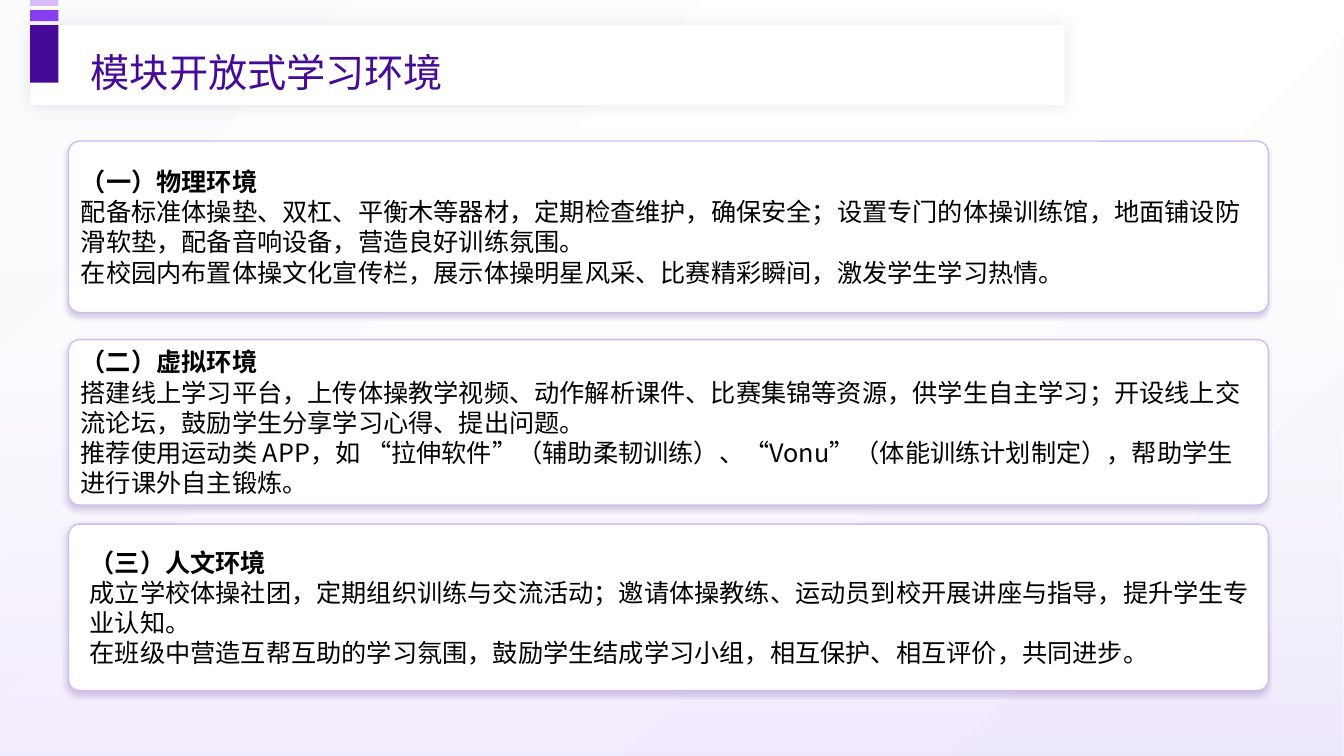
from lxml import etree
from pptx import Presentation
from pptx.dml.color import RGBColor
from pptx.enum.shapes import MSO_SHAPE
from pptx.enum.text import MSO_ANCHOR, MSO_AUTO_SIZE, PP_ALIGN
from pptx.oxml.ns import qn
from pptx.util import Inches, Pt

FONT = "Noto Sans CJK SC"
COLORS = {"deep": "450B98", "violet": "873DF1", "lilac": "D7BEFA", "border": "D0BCF5",
          "glow": "AF7EF6", "shade": "340872", "mist": "FAFBFC", "white": "FFFFFF",
          "black": "000000"}
RGB = {name: RGBColor.from_string(value) for name, value in COLORS.items()}


def set_gradient(parent, stops, angle):
    """Swap the solid fill in parent for a gradient of (position, colour, alpha)."""
    grad = etree.Element(qn("a:gradFill"), rotWithShape="1")
    gs_list = etree.SubElement(grad, qn("a:gsLst"))
    for pos, color, alpha in stops:
        gs = etree.SubElement(gs_list, qn("a:gs"), pos=str(pos * 1000))
        clr = etree.SubElement(gs, qn("a:srgbClr"), val=COLORS[color])
        etree.SubElement(clr, qn("a:alpha"), val=str(alpha * 1000))
    etree.SubElement(grad, qn("a:lin"), ang=str(angle * 60000), scaled="0")
    parent.replace(parent.find(qn("a:solidFill")), grad)


def style_paragraph(p, size, color, bold=False):
    p.alignment = PP_ALIGN.LEFT
    p.font.size = Pt(size)
    p.font.bold = bold
    p.font.color.rgb = RGB[color]
    p.font.name = FONT
    latin = p.font._element.find(qn("a:latin"))
    latin.addnext(etree.Element(qn("a:ea"), typeface=FONT))


prs = Presentation()
prs.slide_width, prs.slide_height = Inches(13.33), Inches(7.5)
s = prs.slides.add_slide(prs.slide_layouts[5])

# Background with a violet glow rising from the bottom
s.background.fill.solid()
set_gradient(s.background._cSld.bg.bgPr,
             [(0, "mist", 100), (50, "white", 100), (97, "mist", 100)], 45)
glow = s.shapes.add_shape(MSO_SHAPE.RECTANGLE, 0, 0, prs.slide_width, prs.slide_height)
glow.shadow.inherit = False
glow.line.fill.background()
glow.fill.solid()
set_gradient(glow._element.spPr, [(35, "lilac", 0), (100, "glow", 15)], 90)
s.shapes._spTree.insert(2, glow._element)

# Title bar
title = s.shapes.title
title.left, title.top = Inches(0.3), Inches(0.25)
title.width, title.height = Inches(10.26), Inches(0.79)
title.fill.solid()
title.fill.fore_color.rgb = RGB["white"]
tf = title.text_frame
tf.text = "模块开放式学习环境"
tf.auto_size = MSO_AUTO_SIZE.NONE
tf.vertical_anchor = MSO_ANCHOR.MIDDLE
tf.margin_left = Inches(0.6)
tf.paragraphs[0].line_spacing = 1.3
style_paragraph(tf.paragraphs[0], 28, "deep")
shadows = [(title, "black", 10, 13, 0, 0)]

# Accent blocks at the left of the title
for top, height, color in [(0.25, 0.57, "deep"), (0.1, 0.11, "violet"), (0, 0.06, "lilac")]:
    sp = s.shapes.add_shape(MSO_SHAPE.RECTANGLE, Inches(0.3), Inches(top),
                            Inches(0.28), Inches(height))
    sp.shadow.inherit = False
    sp.fill.solid()
    sp.fill.fore_color.rgb = RGB[color]
    sp.line.fill.background()

# Environment cards: top, height, paragraphs
cards = [
    (1.4, 1.7, [
        "（一）物理环境",
        "配备标准体操垫、双杠、平衡木等器材，定期检查维护，确保安全；设置专门的体操训练馆，地面铺设防滑软垫，配备音响设备，营造良好训练氛围。",
        "在校园内布置体操文化宣传栏，展示体操明星风采、比赛精彩瞬间，激发学生学习热情。"]),
    (3.37, 1.64, [
        "（二）虚拟环境",
        "搭建线上学习平台，上传体操教学视频、动作解析课件、比赛集锦等资源，供学生自主学习；开设线上交流论坛，鼓励学生分享学习心得、提出问题。",
        "推荐使用运动类 APP，如 “拉伸软件”（辅助柔韧训练）、“Vonu”（体能训练计划制定），帮助学生进行课外自主锻炼。"]),
    (5.2, 1.65, [
        "（三）人文环境",
        "成立学校体操社团，定期组织训练与交流活动；邀请体操教练、运动员到校开展讲座与指导，提升学生专业认知。",
        "在班级中营造互帮互助的学习氛围，鼓励学生结成学习小组，相互保护、相互评价，共同进步。"]),
]
for top, height, lines in cards:
    card = s.shapes.add_shape(MSO_SHAPE.ROUNDED_RECTANGLE, Inches(0.68), Inches(top),
                              Inches(11.9), Inches(height))
    card.adjustments[0] = 0.066
    card.fill.solid()
    card.fill.fore_color.rgb = RGB["white"]
    card.line.color.rgb = RGB["border"]
    card.line.width = Pt(0.95)
    shadows.append((card, "shade", 20, 4, 3, 135))

    # The last card carries its text in a box set slightly to the right
    holder = card
    if lines is cards[-1][2]:
        holder = s.shapes.add_textbox(Inches(0.79), Inches(5.37), Inches(11.79), Inches(1.31))
    tf = holder.text_frame
    tf.word_wrap = True
    tf.vertical_anchor = MSO_ANCHOR.MIDDLE
    tf.margin_left = tf.margin_right = Inches(0.1 if holder is not card else 0.09)
    tf.text = "\n".join(lines)
    for i, p in enumerate(tf.paragraphs):
        style_paragraph(p, 18, "black", bold=i == 0)

# Soft shadows for the title bar and the cards
for sp, color, alpha, blur, dist, angle in shadows:
    sp.shadow.inherit = False
    effects = sp._element.spPr.find(qn("a:effectLst"))
    outer = etree.SubElement(effects, qn("a:outerShdw"), blurRad=str(Pt(blur)),
                             dist=str(Pt(dist)), dir=str(angle * 60000), rotWithShape="0")
    clr = etree.SubElement(outer, qn("a:srgbClr"), val=COLORS[color])
    etree.SubElement(clr, qn("a:alpha"), val=str(alpha * 1000))

prs.save("out.pptx")
